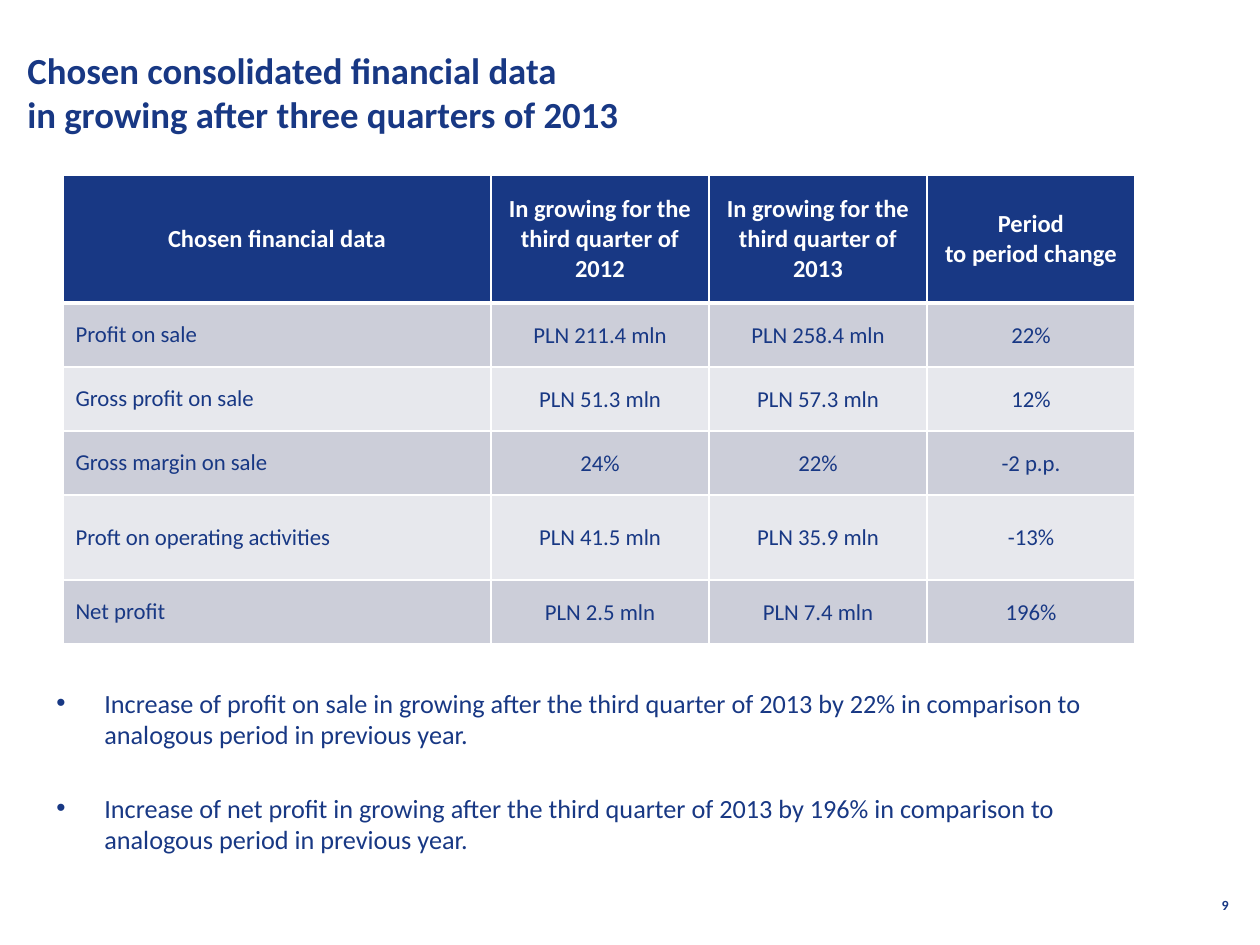
from lxml.etree import SubElement
from pptx import Presentation
from pptx.dml.color import RGBColor
from pptx.enum.text import MSO_ANCHOR, PP_ALIGN
from pptx.oxml.ns import qn
from pptx.util import Pt

SCALE = 914400 / 126
NAVY, WHITE = "183884", "FFFFFF"
BANDS = ["CCCED9", "E7E8ED"]
COLS = [428, 218, 218, 208]
ROWS = [128, 64, 64, 64, 85, 64]
DATA = [
    ["Chosen financial data", "In growing for the third quarter of 2012",
     "In growing for the third quarter of 2013", "Period\vto period change"],
    ["Profit on sale", "PLN 211.4 mln", "PLN 258.4 mln", "22%"],
    ["Gross profit on sale", "PLN 51.3 mln", "PLN 57.3 mln", "12%"],
    ["Gross margin on sale", "24%", "22%", "-2 p.p."],
    ["Proft on operating activities", "PLN 41.5 mln", "PLN 35.9 mln", "-13%"],
    ["Net profit", "PLN 2.5 mln", "PLN 7.4 mln", "196%"],
]
NOTES = [
    "Increase of profit on sale in growing after the third quarter of 2013 "
    "by 22% in comparison to analogous period in previous year.",
    "Increase of net profit in growing after the third quarter of 2013 "
    "by 196% in comparison to analogous period in previous year.",
]


def px(n):
    return round(n * SCALE)


def color(code):
    return RGBColor.from_string(code)


def style(para, size, tint=NAVY, bold=False, align=PP_ALIGN.LEFT):
    para.alignment = align
    for run in para.runs:
        font = run.font
        font.name, font.size, font.bold = "Calibri", Pt(size), bold
        font.color.rgb = color(tint)


def add_box(slide, x, y, w, h, anchor=MSO_ANCHOR.TOP):
    frame = slide.shapes.add_textbox(px(x), px(y), px(w), px(h)).text_frame
    frame.word_wrap = True
    frame.vertical_anchor = anchor
    return frame


def add_line(slide, text, box, size, align=PP_ALIGN.LEFT, anchor=MSO_ANCHOR.TOP):
    frame = add_box(slide, *box, anchor)
    para = frame.paragraphs[0]
    para.text = text
    style(para, size, bold=True, align=align)


def add_list(slide, items, box, size):
    frame = add_box(slide, *box)
    for i, item in enumerate(items):
        para = frame.add_paragraph() if i else frame.paragraphs[0]
        para.text = item
        props = para._p.get_or_add_pPr()
        props.set("marL", str(px(48)))
        props.set("indent", str(-px(48)))
        if i:
            para.space_before = Pt(24)
        SubElement(props, qn("a:buFont"), typeface="Arial")
        SubElement(props, qn("a:buChar"), char="•")
        style(para, size)


def set_edges(cell, top, base):
    props = cell._tc.get_or_add_tcPr()
    for side, width in zip("LRTB", (1, 1, top, base)):
        line = SubElement(props, qn("a:ln" + side), w=str(Pt(width)))
        fill = SubElement(line, qn("a:solidFill"))
        SubElement(fill, qn("a:srgbClr"), val=WHITE)


def fill_cell(cell, text, row, col):
    head = row == 0
    cell.text = text
    cell.vertical_anchor = MSO_ANCHOR.MIDDLE
    if not head and col:
        cell.margin_left = cell.margin_right = cell.margin_top = px(1)
        cell.margin_bottom = 0
    set_edges(cell, 3 if row == 1 else 1, 3 if head else 1)
    cell.fill.solid()
    cell.fill.fore_color.rgb = color(NAVY if head else BANDS[(row - 1) % 2])
    align = PP_ALIGN.CENTER if head or col else PP_ALIGN.LEFT
    style(cell.text_frame.paragraphs[0], 14 if head else 13,
          WHITE if head else NAVY, head, align)


def add_grid(slide, x, y):
    table = slide.shapes.add_table(len(ROWS), len(COLS), px(x), px(y),
                                   px(sum(COLS)), px(sum(ROWS))).table
    for col, width in zip(table.columns, COLS):
        col.width = px(width)
    for row, height in zip(table.rows, ROWS):
        row.height = px(height)
    for r, line in enumerate(DATA):
        for c, text in enumerate(line):
            fill_cell(table.cell(r, c), text, r, c)


def main():
    deck = Presentation()
    deck.slide_width, deck.slide_height = px(1260), px(945)
    slide = deck.slides.add_slide(deck.slide_layouts[6])
    add_line(slide, "9", (947, 890, 294, 46), 8, PP_ALIGN.RIGHT)
    add_line(slide, "Chosen consolidated financial data\v"
             "in growing after three quarters of 2013",
             (15, 46, 1101, 91), 21, anchor=MSO_ANCHOR.MIDDLE)
    add_list(slide, NOTES, (44, 681, 1134, 179), 15)
    add_grid(slide, 63, 175)
    deck.save("out.pptx")


if __name__ == "__main__":
    main()
